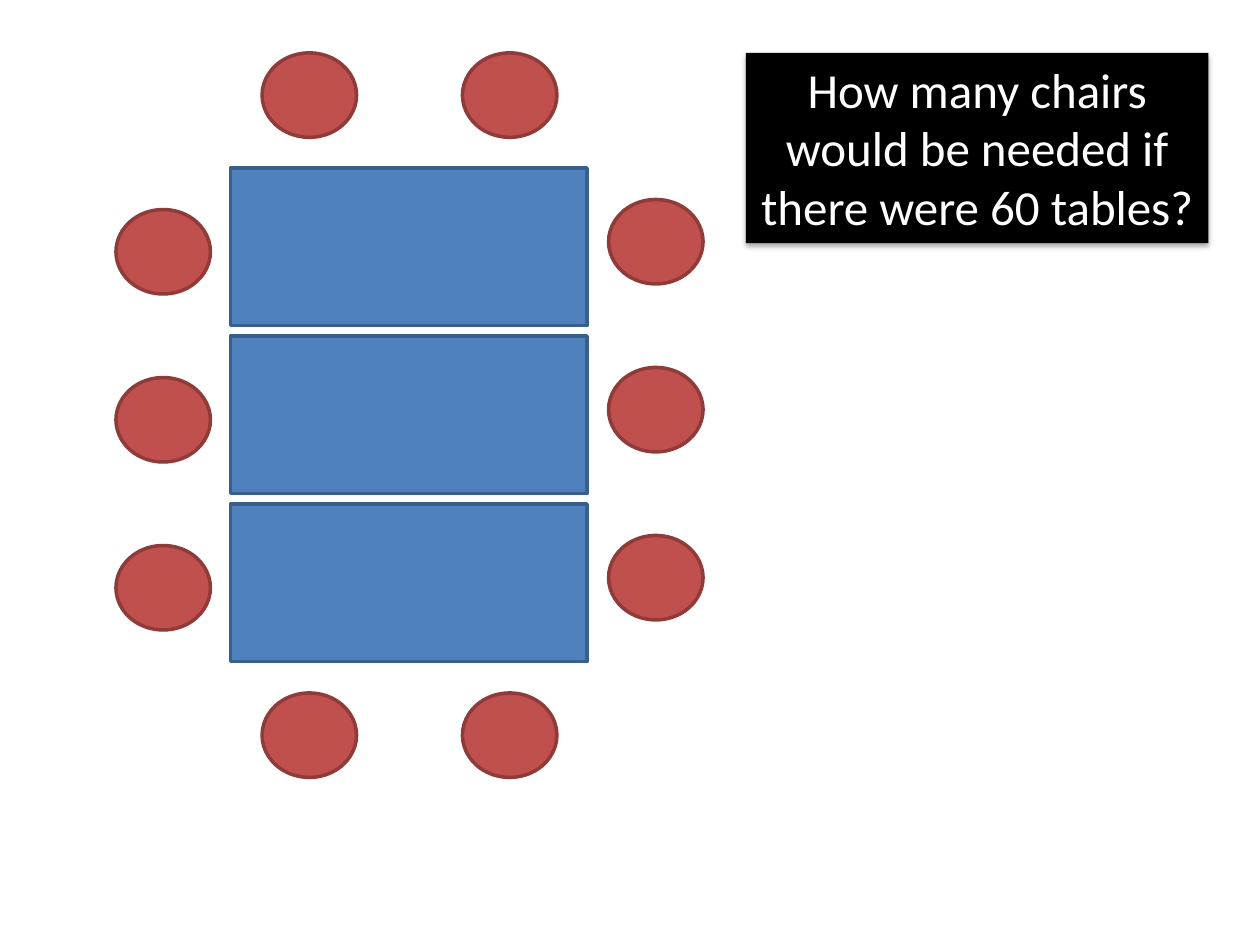
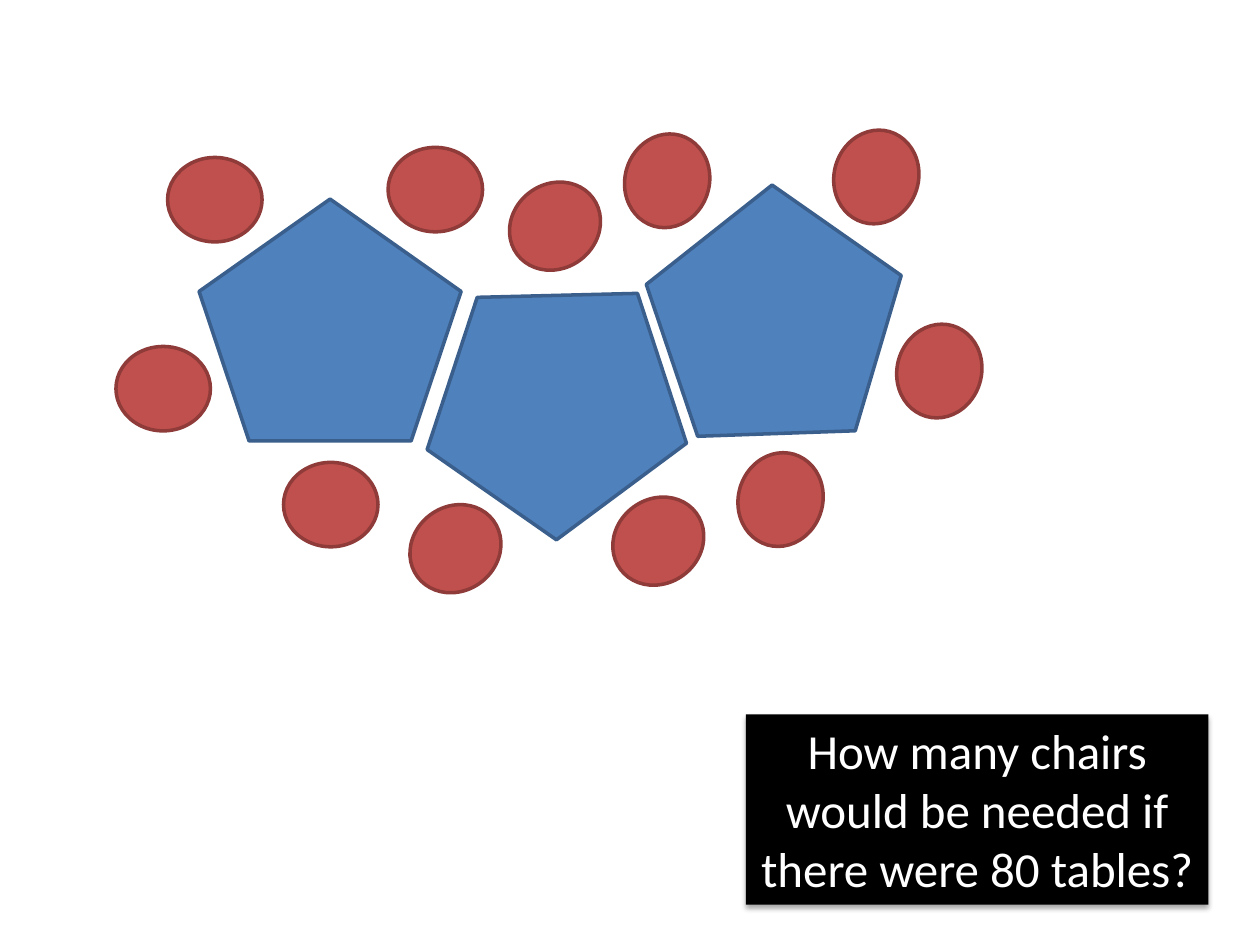
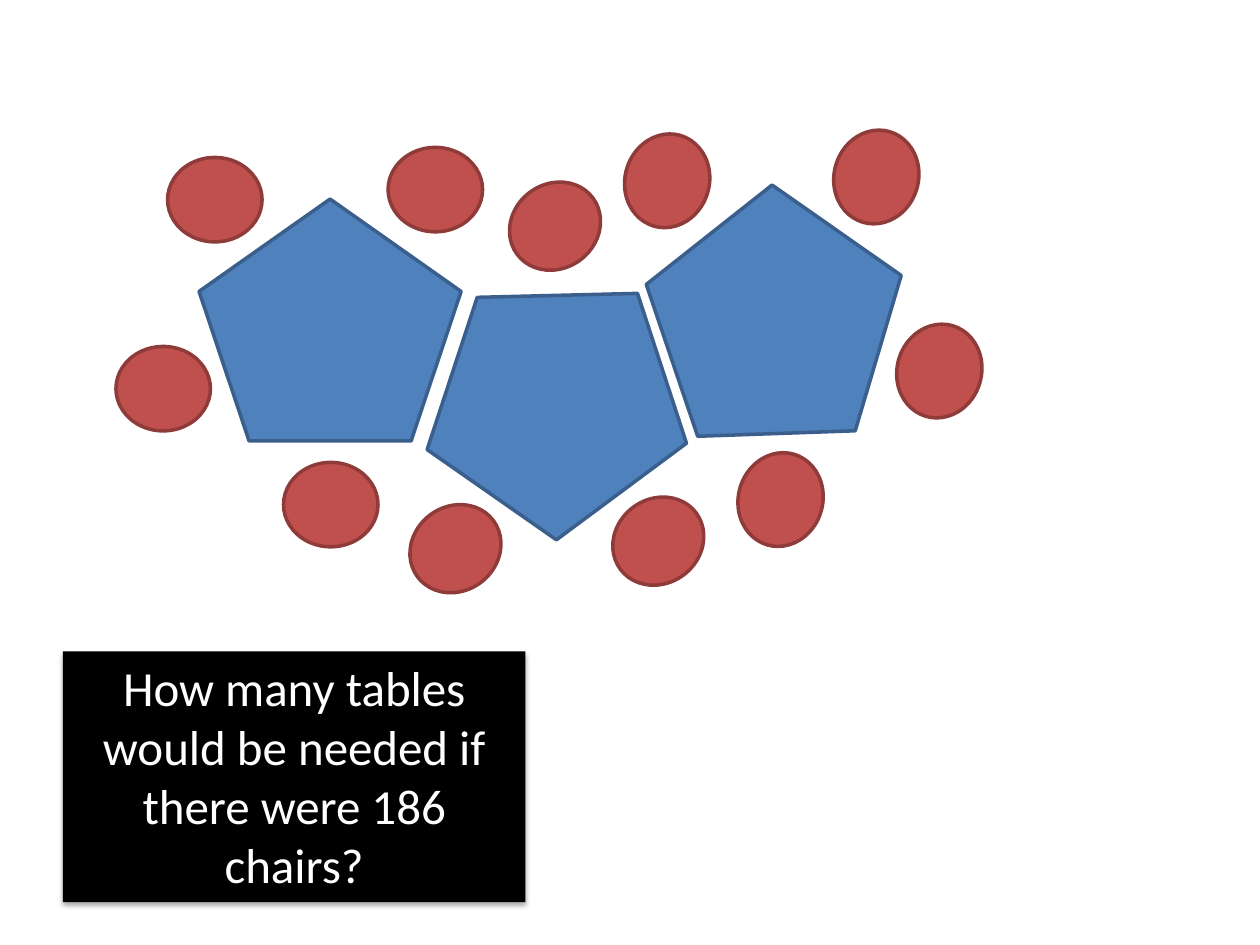
from lxml import etree
from pptx import Presentation
from pptx.dml.color import RGBColor
from pptx.enum.shapes import MSO_SHAPE as SHAPE
from pptx.enum.text import MSO_AUTO_SIZE, PP_ALIGN
from pptx.oxml.ns import qn
from pptx.util import Inches, Pt

TABLE_FILL, TABLE_LINE = "4F81BD", "3A5F8C"
CHAIR_FILL, CHAIR_LINE = "C0504D", "8E3B39"
BOX_FILL, BOX_TEXT = "000000", "FFFFFF"
FONT, FONT_SIZE = "Calibri", 28

RECT_SIZE = (2.83, 1.25)
PENTAGON_SIZE = (2.08, 1.92)
CHAIR_SIZE = (0.75, 0.67)
BOX_WIDTH = 3.67

# Row of rectangular tables
ROWS, ROW_PITCH = 3, 4 / 3
RECT_LEFT = 1.83
SIDE_CHAIRS = [(0.92, 0.33), (4.83, 0.25)]  # left, offset below the table's top
END_CHAIR_LEFTS = [2.08, 3.67]
END_CHAIR_TOPS = {0: 0.42, ROWS - 1: 5.5}

# Pentagonal tables: position, rotation, positions of their chairs
PENTAGONS = [
    ((1.58, 1.58), 0, [(1.33, 1.25), (0.92, 2.75), (3.08, 1.17), (2.25, 3.67)]),
    ((3.32, 2.17), 323.4, [(3.24, 4.02), (4.03, 1.46), (4.85, 3.96)]),
    ((5.01, 1.57), 286.5, [(5.82, 3.63), (4.92, 1.1), (7.08, 2.61), (6.58, 1.07)]),
]


def rect_tables():
    tables = []
    for row in range(ROWS):
        top = ROW_PITCH * (row + 1)
        chairs = [(left, top + drop) for left, drop in SIDE_CHAIRS]
        if row in END_CHAIR_TOPS:
            chairs += [(left, END_CHAIR_TOPS[row]) for left in END_CHAIR_LEFTS]
        tables.append(((RECT_LEFT, top), 0, chairs))
    return tables


# Table shape, table size, tables, question, question's left, top and height
SLIDES = [
    (SHAPE.RECTANGLE, RECT_SIZE, rect_tables(),
     "How many chairs would be needed if there were 60 tables?", (5.92, 0.42, 1.51)),
    (SHAPE.REGULAR_PENTAGON, PENTAGON_SIZE, PENTAGONS,
     "How many chairs would be needed if there were 80 tables?", (5.92, 5.67, 1.51)),
    (SHAPE.REGULAR_PENTAGON, PENTAGON_SIZE, PENTAGONS,
     "How many tables would be needed if there were 186 chairs?", (0.5, 5.17, 1.99)),
]


def rgb(color):
    return RGBColor.from_string(color)


def add_piece(shapes, kind, at, size, rotation, fill, line):
    sp = shapes.add_shape(kind, *map(Inches, (*at, *size)))
    sp.rotation = rotation
    sp.shadow.inherit = False
    sp.fill.solid()
    sp.fill.fore_color.rgb = rgb(fill)
    sp.line.color.rgb = rgb(line)
    sp.line.width = Pt(2)


def add_seating(slide, kind, size, tables):
    """Add each table grouped with the chairs around it."""
    for at, rotation, chairs in tables:
        shapes = slide.shapes.add_group_shape().shapes
        add_piece(shapes, kind, at, size, rotation, TABLE_FILL, TABLE_LINE)
        for chair in chairs:
            add_piece(shapes, SHAPE.OVAL, chair, CHAIR_SIZE, rotation,
                      CHAIR_FILL, CHAIR_LINE)


def add_shadow(sp):
    effects = etree.SubElement(sp._element.spPr, qn("a:effectLst"))
    shadow = etree.SubElement(effects, qn("a:outerShdw"), blurRad=str(Pt(3.1)),
                              dist=str(Pt(1.8)), dir="5400000", rotWithShape="0")
    color = etree.SubElement(shadow, qn("a:srgbClr"), val="000000")
    etree.SubElement(color, qn("a:alpha"), val="35000")


def add_question(slide, text, left, top, height):
    sp = slide.shapes.add_textbox(*map(Inches, (left, top, BOX_WIDTH, height)))
    sp.fill.solid()
    sp.fill.fore_color.rgb = rgb(BOX_FILL)
    add_shadow(sp)
    tf = sp.text_frame
    tf.word_wrap = True
    tf.auto_size = MSO_AUTO_SIZE.SHAPE_TO_FIT_TEXT
    p = tf.paragraphs[0]
    p.text = text
    p.alignment = PP_ALIGN.CENTER
    p.font.name = FONT
    p.font.size = Pt(FONT_SIZE)
    p.font.color.rgb = rgb(BOX_TEXT)


def main():
    prs = Presentation()
    prs.slide_width, prs.slide_height = Inches(10), Inches(7.5)
    for kind, size, tables, question, place in SLIDES:
        slide = prs.slides.add_slide(prs.slide_layouts[6])
        add_seating(slide, kind, size, tables)
        add_question(slide, question, *place)
    prs.save("out.pptx")


if __name__ == "__main__":
    main()
